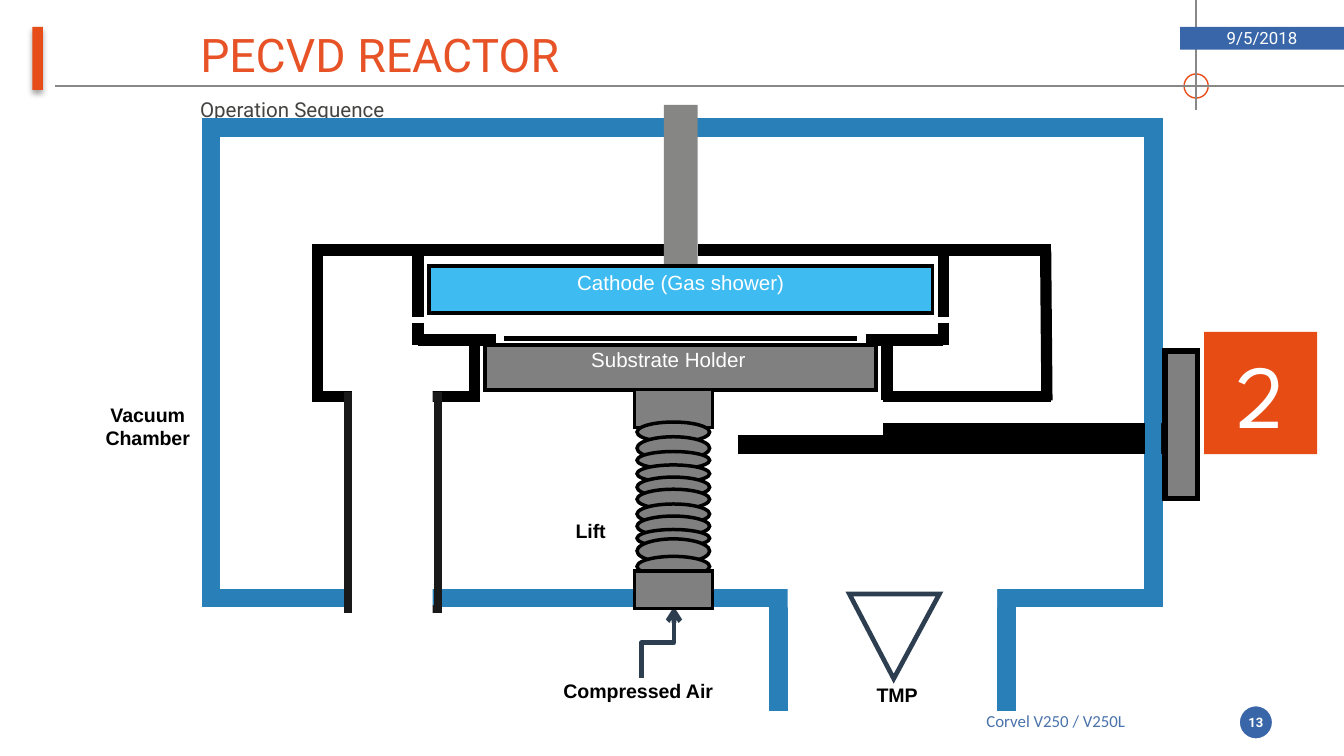
"""Build the PECVD reactor operation slide."""
from pptx import Presentation
from pptx.dml.color import RGBColor
from pptx.enum.shapes import MSO_CONNECTOR, MSO_SHAPE
from pptx.enum.text import MSO_ANCHOR, PP_ALIGN
from pptx.oxml import parse_xml
from pptx.oxml.ns import nsdecls, qn
from pptx.util import Inches, Pt

RECT, OVAL = MSO_SHAPE.RECTANGLE, MSO_SHAPE.OVAL
STRAIGHT, ELBOW = MSO_CONNECTOR.STRAIGHT, MSO_CONNECTOR.ELBOW
LEFT, CENTER = PP_ALIGN.LEFT, PP_ALIGN.CENTER
TOP, MIDDLE = MSO_ANCHOR.TOP, MSO_ANCHOR.MIDDLE
WHITE = RGBColor(0xFF, 0xFF, 0xFF)
BLACK = RGBColor(0, 0, 0)
RULE = RGBColor(0x88, 0x88, 0x86)
ORANGE = RGBColor(0xE7, 0x4D, 0x18)
TITLE = RGBColor(0xE7, 0x53, 0x26)
STEP = RGBColor(0xE7, 0x4C, 0x15)
NAVY = RGBColor(0x38, 0x66, 0xA8)
FOOT = RGBColor(0x49, 0x72, 0xAB)
INK = RGBColor(0x43, 0x43, 0x42)
WALL = RGBColor(0x29, 0x80, 0xB9)
STEEL = RGBColor(0x80, 0x80, 0x80)
ROD = RGBColor(0x86, 0x86, 0x85)
DUCT = RGBColor(0x19, 0x19, 0x19)
SKY = RGBColor(0x3E, 0xBB, 0xF0)
SLATE = RGBColor(0x2C, 0x3E, 0x50)

deck = Presentation()
deck.slide_width = Inches(10)
deck.slide_height = deck.slide_width * 9 // 16
slide = deck.slides.add_slide(deck.slide_layouts[5])
shapes = slide.shapes


def write(shape, text, size, color, font="Arial", bold=False, align=CENTER,
          anchor=MIDDLE, inset=(0.1, 0.05, 0.1, 0.05), space=1.0, wrap=True):
    frame = shape.text_frame
    frame.text = text
    frame.word_wrap = wrap
    frame.vertical_anchor = anchor
    (frame.margin_left, frame.margin_top,
     frame.margin_right, frame.margin_bottom) = map(Inches, inset)
    for para in frame.paragraphs:
        para.alignment = align
        para.line_spacing = space
        for run in para.runs:
            run.font.name, run.font.size = font, Pt(size)
            run.font.bold, run.font.color.rgb = bold, color


def box(kind, place, fill=None, line=None, width=1):
    shape = shapes.add_shape(kind, *map(Inches, place))
    shape.shadow.inherit = False
    if fill is None:
        shape.fill.background()
    else:
        shape.fill.solid()
        shape.fill.fore_color.rgb = fill
    if line is None:
        shape.line.fill.background()
    else:
        shape.line.color.rgb = line
        shape.line.width = Pt(width)
        edge = shape.element.spPr.find(qn("a:ln"))
        edge.append(parse_xml(f'<a:miter {nsdecls("a")} lim="800000"/>'))
    return shape


head = shapes.title
head.left, head.top, head.width, head.height = map(Inches, (1.39, 0.14, 7.39, 0.52))
write(head, "PECVD REACTOR", 24.8, TITLE, font="Roboto", align=LEFT)

accent = box(RECT, (0.24, 0.2, 0.08, 0.47), ORANGE)
accent.element.spPr.find(qn("a:effectLst")).append(parse_xml(
    f'<a:outerShdw {nsdecls("a")} blurRad="39370" dist="22860" dir="5400000">'
    '<a:srgbClr val="000000"><a:alpha val="35000"/></a:srgbClr></a:outerShdw>'))
box(OVAL, (8.81, 0.55, 0.18, 0.18), None, ORANGE, 0.75)
badge = box(OVAL, (9.21, 5.24, 0.27, 0.27), NAVY, WHITE, 2.25)
write(badge, "13", 7, WHITE, font="Roboto", bold=True, inset=(0, 0, 0, 0), wrap=False)
foot = box(RECT, (6.81, 5.24, 2.09, 0.25), WHITE)
write(foot, "Corvel V250 / V250L", 9, FOOT, font="Calibri")
sub = shapes.add_textbox(*map(Inches, (1.39, 0.67, 2.76, 0.28)))
write(sub, "Operation Sequence", 11, INK, font="Roboto", align=LEFT, anchor=TOP)
step = box(RECT, (8.96, 2.47, 0.84, 0.91), STEP)
write(step, "2", 48, WHITE, font="League Spartan", anchor=TOP)

box(RECT, (1.57, 0.95, 7.01, 3.5), None, WALL, 10.13)

groups = [
    (RULE, 0.75, [(0.41, 0.64, 10, 0.64), (8.9, 0.82, 8.9, 0)]),
    (BLACK, 3, [(3.75, 2.52, 6.38, 2.52)]),
    (BLACK, 10.13, [(5.49, 3.31, 8.69, 3.31), (6.57, 3.22, 8.65, 3.22)]),
    (BLACK, 6, [
        (2.36, 1.83, 2.36, 2.99), (7.78, 1.86, 7.79, 2.98),
        (5.02, 1.86, 2.32, 1.86), (7.82, 1.86, 5.19, 1.86),
        (3.69, 2.53, 3.11, 2.53), (7.02, 2.53, 6.44, 2.53),
        (3.57, 2.95, 2.32, 2.95), (7.82, 2.95, 6.57, 2.95),
        (3.53, 2.53, 3.53, 2.95), (6.6, 2.53, 6.6, 2.98),
        *[(x, a, x, b) for x in (3.11, 7.02) for a, b in ((1.86, 2.36), (2.4, 2.57))],
    ]),
    (WALL, 10.13, [(x, 4.38, x, 5.29) for x in (5.79, 7.49)]),
    (SLATE, 2.5, [(5.16, 4.9, 4.63, 4.66)]),
]
for color, width, ends in groups:
    for end in ends:
        kind = ELBOW if color == SLATE else STRAIGHT
        link = shapes.add_connector(kind, *map(Inches, end))
        link.line.color.rgb = color
        link.line.width = Pt(width)
        link.element.spPr.append(parse_xml(f'<a:effectLst {nsdecls("a")}/>'))
link.element.spPr.find(qn("a:xfrm")).set("rot", "5400000")
link.element.spPr.find(qn("a:ln")).append(
    parse_xml(f'<a:tailEnd {nsdecls("a")} type="arrow"/>'))

date = box(RECT, (8.78, 0.2, 1.22, 0.17), NAVY)
write(date, "9/5/2018", 9, WHITE, font="Roboto")

holder = box(RECT, (3.61, 2.57, 2.91, 0.33), STEEL, BLACK, 2.25)
write(holder, "Substrate Holder", 11, WHITE, anchor=TOP, space=0.8,
      inset=(0.1, 0.05, 0.28, 0.05))
box(RECT, (8.67, 2.61, 0.24, 1.1), STEEL, BLACK, 3.13)
box(RECT, (8.52, 2.86, 0.12, 0.67), WALL)
box(RECT, (5.86, 4.3, 1.56, 0.22), WHITE)
box(RECT, (2.59, 2.95, 0.67, 1.58), None, DUCT, 4.5)
box(RECT, (2.62, 2.89, 0.6, 0.16), WHITE)
box(RECT, (2.62, 4.33, 0.6, 0.33), WHITE)

box(RECT, (4.72, 2.9, 0.58, 0.28), STEEL, BLACK, 1.88)
folds = [(3.14, 0.15), (3.25, 0.17), (3.36, 0.13), (3.46, 0.13), (3.55, 0.15),
         (3.64, 0.15), (3.75, 0.15), (3.84, 0.15), (3.94, 0.13), (4.01, 0.18),
         (4.14, 0.15)]
for top, high in folds:
    box(OVAL, (4.74, top, 0.54, high), STEEL, BLACK, 1.88)
box(RECT, (4.72, 4.25, 0.58, 0.28), STEEL, BLACK, 1.88)

box(RECT, (4.94, 0.78, 0.25, 1.23), ROD)
shower = box(RECT, (3.19, 1.98, 3.75, 0.35), SKY, BLACK, 1.88)
write(shower, "Cathode (Gas shower)", 11, WHITE, anchor=TOP, space=0.9)

pen = shapes.build_freeform(Inches(6.65), Inches(4.42), scale=1.0)
pen.add_line_segments([(Inches(x), Inches(y)) for x, y in
                       ((6.32, 4.42), (6.65, 5.05), (6.99, 4.42))], close=True)
pump = pen.convert_to_shape()
pump.shadow.inherit = False
pump.fill.background()
pump.line.color.rgb = SLATE
pump.line.width = Pt(2.5)
pump.element.spPr.find(qn("a:ln")).append(
    parse_xml(f'<a:miter {nsdecls("a")} lim="800000"/>'))

labels = [
    ("Lift", (4.02, 3.79, 0.75, 0.32)),
    ("Vacuum\nChamber", (0.6, 2.96, 1, 0.42)),
    ("Compressed Air", (3.58, 5.05, 2.34, 0.18)),
    ("TMP", (6.52, 5.08, 0.31, 0.18)),
]
for text, place in labels:
    label = shapes.add_textbox(*map(Inches, place))
    write(label, text, 10.5, BLACK, bold=True, inset=(0, 0, 0, 0), wrap=False)

deck.save("out.pptx")
